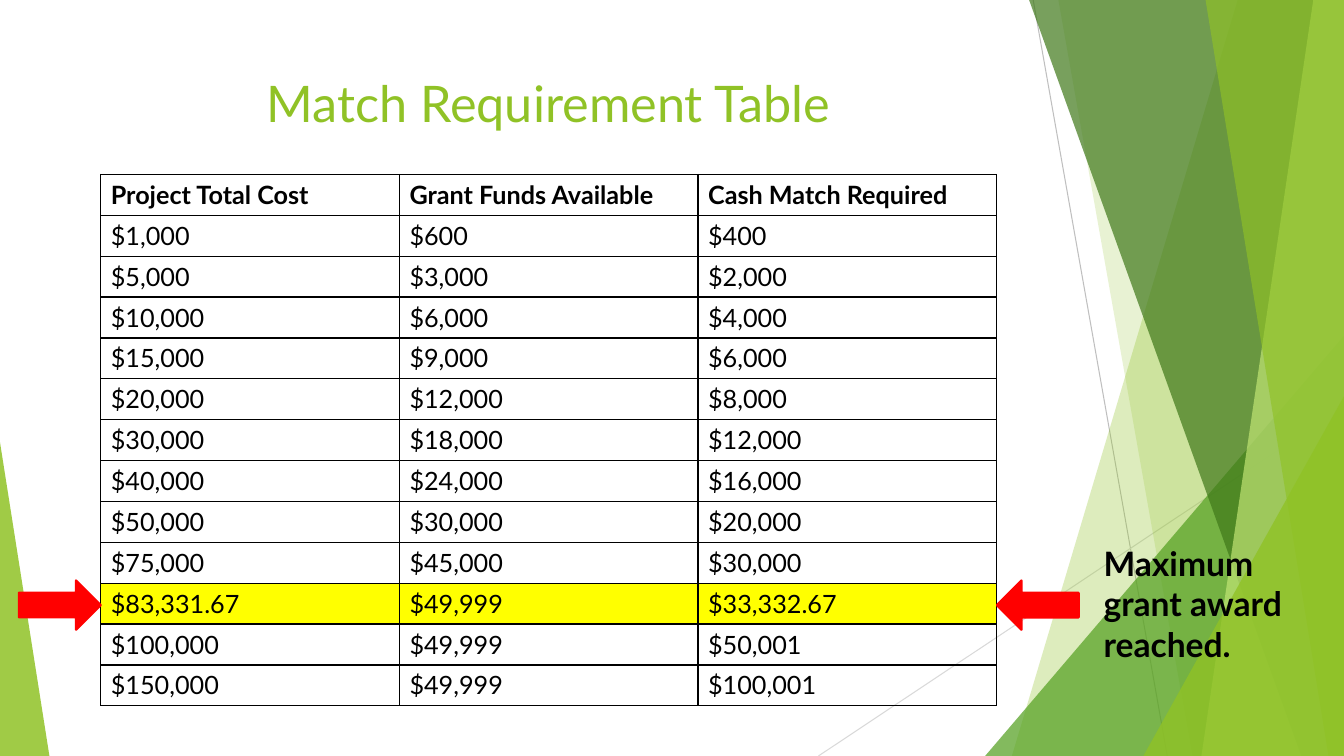
import pptx
import pptx.dml.color
import pptx.enum.shapes
import pptx.enum.text
import pptx.oxml
import pptx.oxml.ns
import pptx.util

Pt = pptx.util.Pt
Shapes = pptx.enum.shapes.MSO_SHAPE
Align = pptx.enum.text.PP_ALIGN
Anchor = pptx.enum.text.MSO_ANCHOR

WIDTH, HEIGHT = 960, 540
FONT = "Lato"
COLORS = {
    "lime": "90C226", "green": "54A021", "forest": "3F7819", "pale": "C0E474",
    "gray": "BFBFBF", "light_gray": "D9D9D9", "black": "000000",
    "yellow": "FFFF00", "red": "FF0000",
}
ROWS = [
    ("Project Total Cost", "Grant Funds Available", "Cash Match Required"),
    ("$1,000", "$600", "$400"),
    ("$5,000", "$3,000", "$2,000"),
    ("$10,000", "$6,000", "$4,000"),
    ("$15,000", "$9,000", "$6,000"),
    ("$20,000", "$12,000", "$8,000"),
    ("$30,000", "$18,000", "$12,000"),
    ("$40,000", "$24,000", "$16,000"),
    ("$50,000", "$30,000", "$20,000"),
    ("$75,000", "$45,000", "$30,000"),
    ("$83,331.67", "$49,999", "$33,332.67"),
    ("$100,000", "$49,999", "$50,001"),
    ("$150,000", "$49,999", "$100,001"),
]
MAXIMUM_ROW = 10


def color(name):
    return pptx.dml.color.RGBColor.from_string(COLORS[name])


def element(xml):
    namespace = pptx.oxml.ns.nsdecls("a")
    return pptx.oxml.parse_xml(xml.replace(" xmlns", " " + namespace, 1))


def paint(shape, name, opacity=100):
    shape.shadow.inherit = False
    shape.fill.solid()
    shape.fill.fore_color.rgb = color(name)
    shape.line.fill.background()
    if opacity < 100:
        tint = shape.fill._xPr.find(".//" + pptx.oxml.ns.qn("a:srgbClr"))
        tint.append(element(f'<a:alpha xmlns val="{opacity * 1000}"/>'))


def add_run(paragraph, text, size, name, bold=False):
    run = paragraph.add_run()
    run.text = text
    run.font.name = FONT
    run.font.size = Pt(size)
    run.font.bold = bold
    run.font.color.rgb = color(name)


def add_text(slide, box, text, size, name, bold=False, align=Align.LEFT):
    frame = slide.shapes.add_textbox(*map(Pt, box)).text_frame
    frame.word_wrap = True
    frame.vertical_anchor = Anchor.TOP
    paragraph = frame.paragraphs[0]
    paragraph.alignment = align
    add_run(paragraph, text, size, name, bold)


def add_thin_line(slide, start, end, name):
    line = slide.shapes.add_connector(
        pptx.enum.shapes.MSO_CONNECTOR.STRAIGHT, *map(Pt, start + end))
    line.line.color.rgb = color(name)
    line.line.width = Pt(0.75)
    line._element.spPr.append(element("<a:effectLst xmlns/>"))


def add_band(slide, box, top_left, bottom_left, name, opacity):
    left, top, width, height = box
    right, bottom = left + width, top + height
    builder = slide.shapes.build_freeform(
        Pt(left + top_left), Pt(top), scale=1.0)
    builder.add_line_segments([
        (Pt(right), Pt(top)), (Pt(right), Pt(bottom)),
        (Pt(left + bottom_left), Pt(bottom))], close=True)
    paint(builder.convert_to_shape(), name, opacity)


def add_wedge(slide, box, apex, name, opacity):
    wedge = slide.shapes.add_shape(Shapes.ISOSCELES_TRIANGLE, *map(Pt, box))
    wedge.adjustments[0] = apex
    paint(wedge, name, opacity)


def add_facets(slide, box):
    left, top, width, height = box
    right, bottom = left + width, top + height

    def band(top_left, bottom_left, name, opacity):
        start = min(top_left, bottom_left)
        add_band(slide, (left + start, top, width - start, height),
                 top_left - start, bottom_left - start, name, opacity)

    def corner(wide, high, name, opacity):
        add_wedge(slide, (right - wide, bottom - high, wide, high),
                  1, name, opacity)

    add_thin_line(slide, (left + 153.4, top), (left + 249.2, bottom), "gray")
    add_thin_line(slide, (right, top + 290.2), (left, bottom), "light_gray")
    band(299.5, 138.2, "lime", 30)
    band(171.4, 267.1, "lime", 20)
    corner(256.3, 300.2, "green", 72)
    band(150.5, 344.9, "forest", 70)
    band(353.5, 273.6, "pale", 70)
    band(276.5, 364.3, "lime", 65)
    corner(143.3, 257, "lime", 80)


def set_borders(cell):
    properties = cell._tc.get_or_add_tcPr()
    for position, side in enumerate("LRTB"):
        properties.insert(position, element(
            f'<a:ln{side} xmlns w="12700"><a:solidFill>'
            f'<a:srgbClr val="{COLORS["black"]}"/></a:solidFill></a:ln{side}>'))


def add_match_table(slide, box):
    table = slide.shapes.add_table(
        len(ROWS), len(ROWS[0]), *map(Pt, box)).table
    table.first_row = table.horz_banding = False
    for column in table.columns:
        column.width = Pt(box[2] / len(ROWS[0]))
    for index, values in enumerate(ROWS):
        table.rows[index].height = Pt(box[3] / len(ROWS))
        for column, value in enumerate(values):
            cell = table.cell(index, column)
            if index == MAXIMUM_ROW:
                cell.fill.solid()
                cell.fill.fore_color.rgb = color("yellow")
            else:
                cell.fill.background()
            set_borders(cell)
            add_run(cell.text_frame.paragraphs[0], value, 18, "black",
                    bold=index == 0)


def add_arrow(slide, box, rotation):
    arrow = slide.shapes.add_shape(Shapes.RIGHT_ARROW, *map(Pt, box))
    paint(arrow, "red")
    arrow.line.color.rgb = color("red")
    arrow.line.width = Pt(1.5)
    arrow.rotation = rotation


def add_maximum_markers(slide, table_box):
    left, top, width, height = table_box
    arrow_width, arrow_height = 58.5, 35.3
    row_height = height / len(ROWS)
    arrow_top = top + (MAXIMUM_ROW + 0.5) * row_height - arrow_height / 2 + 1
    for arrow_left, rotation in ((left - arrow_width, 0), (left + width, 180)):
        add_arrow(slide, (arrow_left, arrow_top, arrow_width, arrow_height),
                  rotation)
    add_text(slide, (left + width + 69.2, arrow_top - 30.2, 165.6, 94.3),
             "Maximum grant award reached.", 24, "black", bold=True)


def main():
    presentation = pptx.Presentation()
    presentation.slide_width = Pt(WIDTH)
    presentation.slide_height = Pt(HEIGHT)
    slide = presentation.slides.add_slide(presentation.slide_layouts[6])
    table_box = (72, 124.6, 640, 379.6)
    add_facets(slide, (584.6, 0, WIDTH - 584.6, HEIGHT))
    add_wedge(slide, (0, 316, 35.3, 224), 0, "lime", 85)
    add_text(slide, (53.3, 48.2, 676.8, 61.9), "Match Requirement Table",
             36, "lime", align=Align.CENTER)
    add_match_table(slide, table_box)
    add_maximum_markers(slide, table_box)
    presentation.save("out.pptx")


if __name__ == "__main__":
    main()
